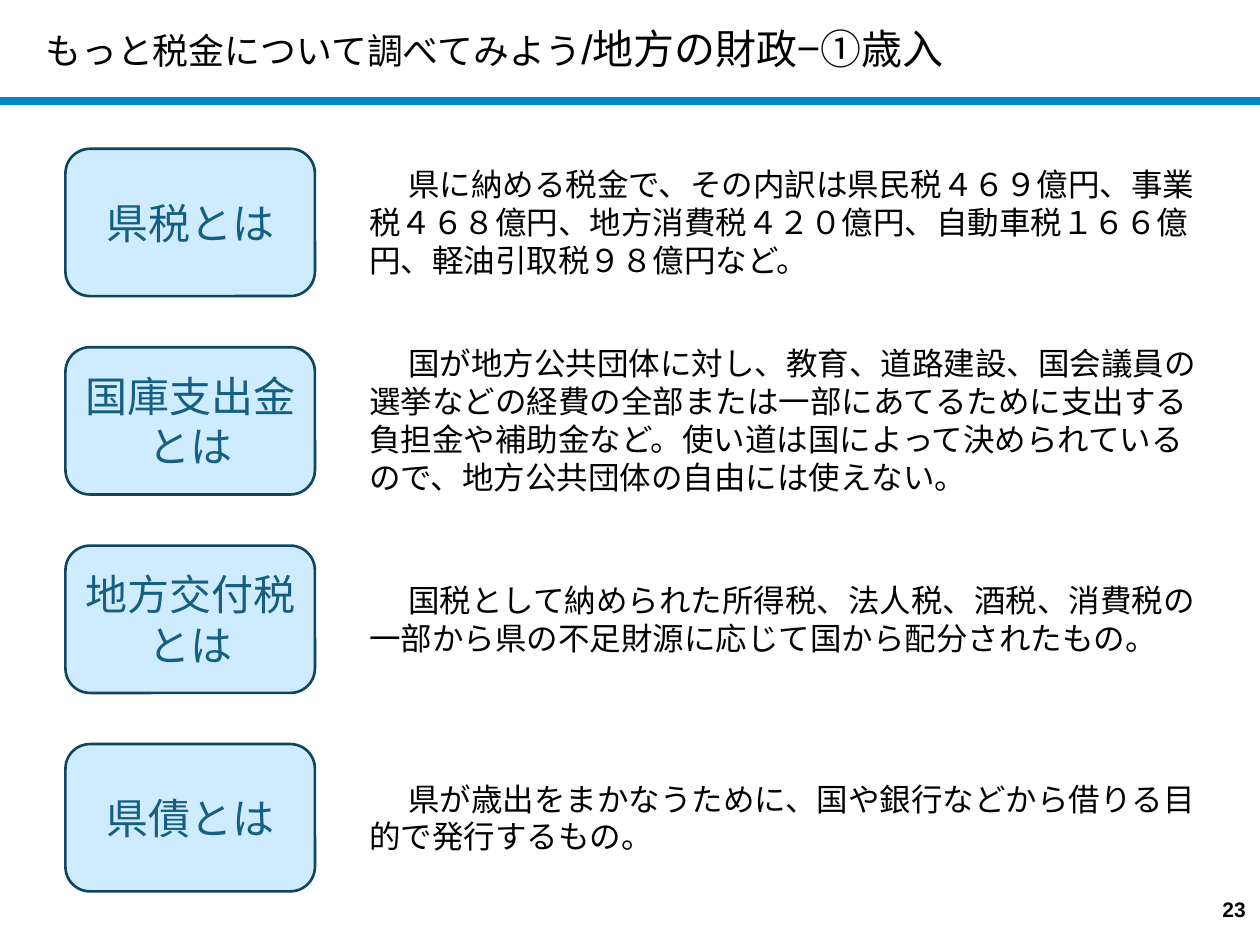
"""Build the slide that explains the four kinds of prefectural revenue."""
import pptx
import pptx.dml.color
import pptx.enum.shapes
import pptx.enum.text
import pptx.util

Cm = pptx.util.Cm
Pt = pptx.util.Pt
RGBColor = pptx.dml.color.RGBColor
Align = pptx.enum.text.PP_ALIGN
Anchor = pptx.enum.text.MSO_ANCHOR
AutoSize = pptx.enum.text.MSO_AUTO_SIZE
Shape = pptx.enum.shapes.MSO_SHAPE

BLACK = RGBColor(0x00, 0x00, 0x00)
RULE_BLUE = RGBColor(0x00, 0x88, 0xCC)
CARD_FILL = RGBColor(0xCE, 0xEC, 0xFE)
CARD_LINE = RGBColor(0x0F, 0x46, 0x5E)
CARD_TEXT = RGBColor(0x15, 0x60, 0x82)

CARD_TOP, CARD_PITCH, CARD_HEIGHT = 3, 4, 2.97
LINE_HEIGHT, INSETS = 0.77, 0.25

TERMS = [
    ("県税とは", 3,
     "県に納める税金で、その内訳は県民税４６９億円、事業税４６８億円、"
     "地方消費税４２０億円、自動車税１６６億円、軽油引取税９８億円など。"),
    ("国庫支出金とは", 4,
     "国が地方公共団体に対し、教育、道路建設、国会議員の選挙などの経費の"
     "全部または一部にあてるために支出する負担金や補助金など。"
     "使い道は国によって決められているので、地方公共団体の自由には使えない。"),
    ("地方交付税とは", 2,
     "国税として納められた所得税、法人税、酒税、消費税の一部から"
     "県の不足財源に応じて国から配分されたもの。"),
    ("県債とは", 2,
     "県が歳出をまかなうために、国や銀行などから借りる目的で発行するもの。"),
]


def style_font(font, size, color, bold=False):
    """Set typeface, size, colour and weight."""
    font.name = "Arial"
    font.size = Pt(size)
    font.color.rgb = color
    font.bold = bold


def fill_title(page):
    """Place the title and write its two sizes of text."""
    title = page.shapes.title
    title.left, title.top = Cm(0.66), Cm(-0.05)
    title.width, title.height = Cm(21.59), Cm(2.03)
    frame = title.text_frame
    frame.auto_size = AutoSize.NONE
    frame.vertical_anchor = Anchor.MIDDLE
    para = frame.paragraphs[0]
    para.alignment = Align.LEFT
    for text, size in (("もっと税金について調べてみよう", 20.5),
                       ("/地方の財政−①歳入", 23.4)):
        span = para.add_run()
        span.text = text
        style_font(span.font, size, BLACK)


def add_rule(page, width):
    """Draw the blue band under the title."""
    rule = page.shapes.add_shape(Shape.RECTANGLE, 0, Cm(1.96), width, Cm(0.16))
    rule.shadow.inherit = False
    rule.fill.solid()
    rule.fill.fore_color.rgb = RULE_BLUE
    rule.line.fill.background()


def add_card(page, top, term):
    """Draw the rounded card that names a term."""
    card = page.shapes.add_shape(
        Shape.ROUNDED_RECTANGLE, Cm(1.32), Cm(top), Cm(5.03), Cm(CARD_HEIGHT))
    card.shadow.inherit = False
    card.fill.solid()
    card.fill.fore_color.rgb = CARD_FILL
    card.line.color.rgb = CARD_LINE
    card.line.width = Pt(1.5)
    frame = card.text_frame
    frame.word_wrap = True
    frame.vertical_anchor = Anchor.MIDDLE
    para = frame.paragraphs[0]
    para.text = term
    para.alignment = Align.CENTER
    style_font(para.font, 24, CARD_TEXT)


def add_explanation(page, middle, line_count, text):
    """Write an explanation centred on the height of its card."""
    height = INSETS + LINE_HEIGHT * line_count
    box = page.shapes.add_textbox(
        Cm(7.19), Cm(middle - height / 2), Cm(17.17), Cm(height))
    frame = box.text_frame
    frame.word_wrap = True
    frame.auto_size = AutoSize.SHAPE_TO_FIT_TEXT
    para = frame.paragraphs[0]
    para.text = text
    para._p.get_or_add_pPr().set("indent", str(Cm(0.79)))
    style_font(para.font, 18, BLACK)


def add_page_number(page, number):
    """Write the page number in the lower right corner."""
    box = page.shapes.add_textbox(Cm(24.36), Cm(17.9), Cm(1.04), Cm(0.84))
    frame = box.text_frame
    frame.word_wrap = True
    frame.vertical_anchor = Anchor.MIDDLE
    para = frame.paragraphs[0]
    para.text = number
    para.alignment = Align.CENTER
    style_font(para.font, 12, BLACK, bold=True)


def main():
    """Build and save the deck."""
    deck = pptx.Presentation()
    deck.slide_width, deck.slide_height = Cm(25.4), Cm(19.05)
    page = deck.slides.add_slide(deck.slide_layouts.get_by_name("Title Only"))
    add_rule(page, deck.slide_width)
    fill_title(page)
    for index, (term, line_count, text) in enumerate(TERMS):
        top = CARD_TOP + CARD_PITCH * index
        add_card(page, top, term)
        add_explanation(page, top + CARD_HEIGHT / 2, line_count, text)
    add_page_number(page, "23")
    deck.save("out.pptx")


if __name__ == "__main__":
    main()
